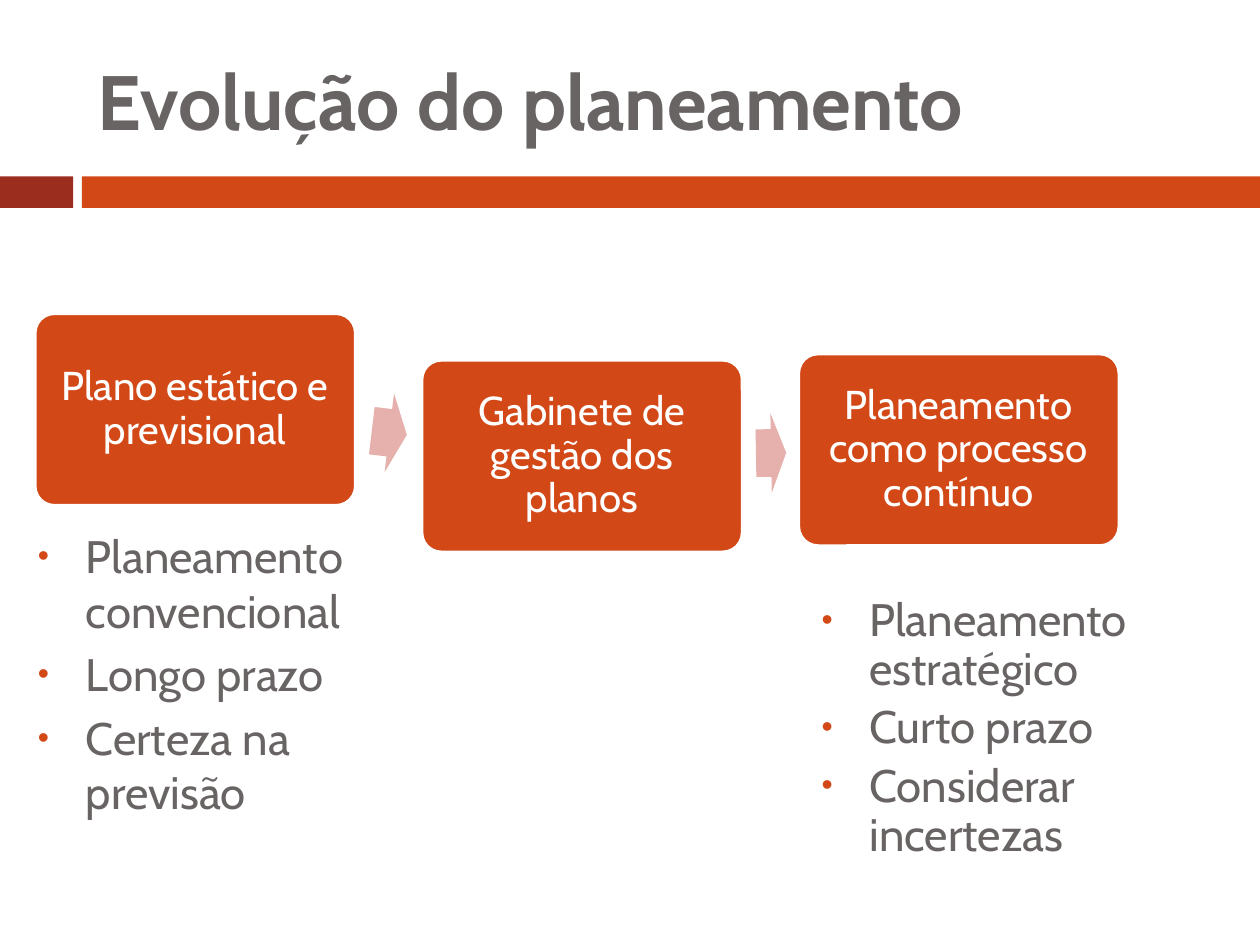
from lxml import etree
from pptx import Presentation
from pptx.dml.color import RGBColor
from pptx.enum import shapes, text
from pptx.oxml import ns
from pptx.util import Inches, Pt

FONT = "Cabin"
COLORS = {"accent": "D34817", "dark": "9B2D1F", "arrow": "E6B1AC",
          "text": "696464", "white": "FFFFFF"}
STAGE_W, STAGE_H = 2.54, 1.52
STAGES = [(0.28, 2.49, "Plano estático e previsional"),
          (3.35, 2.86, "Gabinete de gestão dos planos"),
          (6.34, 2.81, "Planeamento como processo contínuo")]
ARROWS = [((2.95, 3.12, 0.28, 0.63), 6.8), ((6, 3.28, 0.24, 0.63), -1)]
CONVENTIONAL = ["Planeamento convencional", "Longo prazo", "Certeza na previsão"]
STRATEGIC = ["Planeamento estratégico", "Curto prazo", "Considerar incertezas"]


def rgb(name):
    return RGBColor.from_string(COLORS[name])


def place(sp, box):
    sp.left, sp.top, sp.width, sp.height = map(Inches, box)


def style_runs(tf, size, color, bold=False):
    for p in tf.paragraphs:
        for r in p.runs:
            r.font.name, r.font.size, r.font.bold = FONT, Pt(size), bold
            r.font.color.rgb = rgb(color)


def add_block(s, kind, box, fill):
    sp = s.shapes.add_shape(kind, *map(Inches, box))
    sp.shadow.inherit = False
    sp.fill.solid()
    sp.fill.fore_color.rgb = rgb(fill)
    sp.line.fill.background()
    return sp


def add_header(s, title, box):
    """Title over a two-part band that runs across the slide."""
    for x, w, fill in [(0, 0.58, "dark"), (0.65, 9.35, "accent")]:
        add_block(s, shapes.MSO_SHAPE.RECTANGLE, (x, 1.4, w, 0.25), fill)
    sp = s.shapes.title
    place(sp, box)
    tf = sp.text_frame
    tf.text = title
    tf.auto_size = text.MSO_AUTO_SIZE.NONE
    tf.vertical_anchor = text.MSO_ANCHOR.MIDDLE
    tf.paragraphs[0].alignment = text.PP_ALIGN.LEFT
    style_runs(tf, 44, "text", bold=True)


def add_stage(s, label, box):
    sp = add_block(s, shapes.MSO_SHAPE.ROUNDED_RECTANGLE, box, "accent")
    sp.adjustments[0] = 0.1
    sp.line.color.rgb = rgb("white")
    sp.line.width = Pt(1.5)
    tf = sp.text_frame
    tf.text = label
    tf.word_wrap = True
    tf.vertical_anchor = text.MSO_ANCHOR.MIDDLE
    # The corner inset of a rounded rectangle adds to these margins.
    tf.margin_left = tf.margin_right = Inches(0.06)
    tf.margin_top = tf.margin_bottom = Inches(0.06)
    p = tf.paragraphs[0]
    p.alignment = text.PP_ALIGN.CENTER
    p.line_spacing = 0.9
    style_runs(tf, 23, "white")


def add_process(s):
    for x, y, label in STAGES:
        add_stage(s, label, (x, y, STAGE_W, STAGE_H))
    for box, angle in ARROWS:
        sp = add_block(s, shapes.MSO_SHAPE.RIGHT_ARROW, box, "arrow")
        sp.adjustments[0] = 0.6
        sp.rotation = angle


def set_bullet(p):
    pPr = p._p.get_or_add_pPr()
    pPr.set("marL", str(Inches(0.38)))
    pPr.set("indent", str(-Inches(0.38)))
    color = etree.SubElement(pPr, ns.qn("a:buClr"))
    etree.SubElement(color, ns.qn("a:srgbClr"), val=COLORS["accent"])
    etree.SubElement(pPr, ns.qn("a:buSzPct"), val="70000")
    etree.SubElement(pPr, ns.qn("a:buFont"), typeface="Arial")
    etree.SubElement(pPr, ns.qn("a:buChar"), char="•")


def fill_list(sp, items, box, line_spacing):
    place(sp, box)
    tf = sp.text_frame
    tf.text = "\n".join(items)
    tf.auto_size = text.MSO_AUTO_SIZE.NONE
    for p in tf.paragraphs:
        p.line_spacing = line_spacing
        p.space_before = Pt(5.2)
        set_bullet(p)
    style_runs(tf, 26, "text")


def main():
    prs = Presentation()
    prs.slide_width, prs.slide_height = Inches(10), Inches(7.5)
    s = prs.slides.add_slide(prs.slide_layouts.get_by_name("Two Content"))
    add_header(s, "Evolução do planeamento", (0.67, 0.25, 8.92, 1.08))
    add_process(s)
    fill_list(s.placeholders[1], CONVENTIONAL, (0.2, 4.14, 2.91, 2.44), 1.0)
    fill_list(s.placeholders[2], STRATEGIC, (6.42, 4.69, 3.27, 2.36), 0.9)
    prs.save("out.pptx")


if __name__ == "__main__":
    main()
